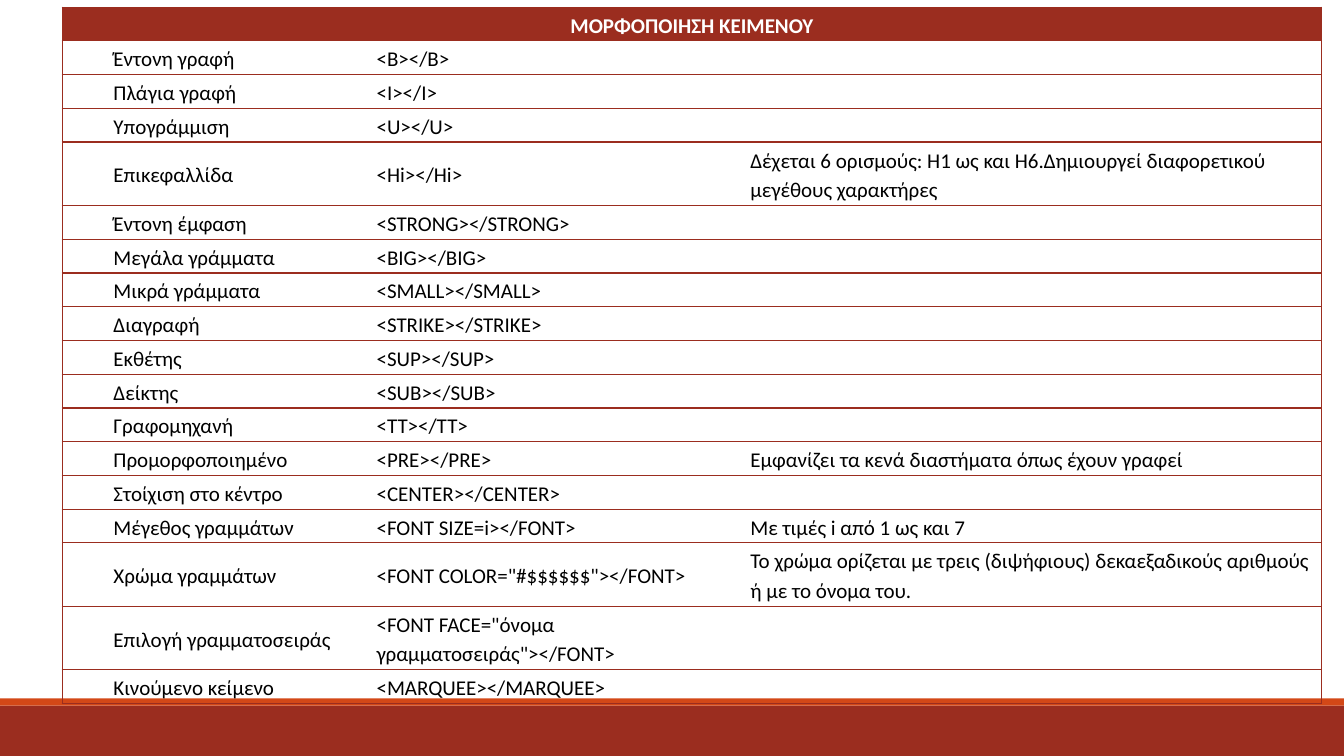
"""Build a slide with a table of HTML text formatting tags."""
from lxml import etree
from pptx import Presentation
from pptx.dml.color import RGBColor
from pptx.enum import shapes, text
from pptx.oxml import ns
from pptx.util import Cm, Pt

HEADING = "ΜΟΡΦΟΠΟΙΗΣΗ ΚΕΙΜΕΝΟΥ"
TAGS = [
    ("Έντονη γραφή", "<B></B>", ""),
    ("Πλάγια γραφή", "<I></I>", ""),
    ("Υπογράμμιση", "<U></U>", ""),
    ("Επικεφαλλίδα", "<Hi></Hi>",
     "Δέχεται 6 ορισμούς: H1 ως και H6.Δημιουργεί διαφορετικού μεγέθους χαρακτήρες"),
    ("Έντονη έμφαση", "<STRONG></STRONG>", ""),
    ("Μεγάλα γράμματα", "<BIG></BIG>", ""),
    ("Μικρά γράμματα", "<SMALL></SMALL>", ""),
    ("Διαγραφή", "<STRIKE></STRIKE>", ""),
    ("Εκθέτης", "<SUP></SUP>", ""),
    ("Δείκτης", "<SUB></SUB>", ""),
    ("Γραφομηχανή", "<TT></TT>", ""),
    ("Προμορφοποιημένο", "<PRE></PRE>", "Εμφανίζει τα κενά διαστήματα όπως έχουν γραφεί"),
    ("Στοίχιση στο κέντρο", "<CENTER></CENTER>", ""),
    ("Μέγεθος γραμμάτων", "<FONT SIZE=i></FONT>", "Με τιμές i από 1 ως και 7"),
    ("Χρώμα γραμμάτων", '<FONT COLOR="#$$$$$$"></FONT>',
     "Το χρώμα ορίζεται με τρεις (διψήφιους) δεκαεξαδικούς αριθμούς ή με το όνομα του."),
    ("Επιλογή γραμματοσειράς", '<FONT FACE="όνομα γραμματοσειράς"></FONT>', ""),
    ("Κινούμενο κείμενο", "<MARQUEE></MARQUEE>", ""),
]
TWO_LINE_ROWS = {4, 15, 16}
COLUMN_WIDTHS = [1.24, 6.63, 9.42, 14.45]
ROW_HEIGHT, TWO_LINE_HEIGHT = 0.85, 1.6
TABLE_LEFT, TABLE_TOP = 1.57, 0.18
PAGE_WIDTH, PAGE_HEIGHT = 33.87, 19.05
BRICK, ORANGE, WHITE, BLACK = "9B2D1F", "D34817", "FFFFFF", "000000"
FOOTER_BARS = [(17.78, 1.27, BRICK), (17.6, 0.18, ORANGE)]


def colour(value):
    return RGBColor.from_string(value)


def add_bar(page, top, height, fill):
    bar = page.shapes.add_shape(shapes.MSO_SHAPE.RECTANGLE, 0, Cm(top), Cm(PAGE_WIDTH), Cm(height))
    bar.shadow.inherit = False
    bar.fill.solid()
    bar.fill.fore_color.rgb = colour(fill)
    bar.line.fill.background()


def set_borders(cell, drawn_sides):
    properties = cell._tc.get_or_add_tcPr()
    for side in "LRTB":
        border = etree.SubElement(properties, ns.qn(f"a:ln{side}"), w=str(Pt(1)))
        if side in drawn_sides:
            fill = etree.SubElement(border, ns.qn("a:solidFill"))
            etree.SubElement(fill, ns.qn("a:srgbClr"), val=BRICK)
        else:
            etree.SubElement(border, ns.qn("a:noFill"))


def format_cell(cell, words, is_heading):
    cell.text = words
    cell.vertical_anchor = text.MSO_ANCHOR.MIDDLE
    margin = Cm(0.05 if words else 0)
    cell.margin_left = cell.margin_right = cell.margin_top = cell.margin_bottom = margin
    if is_heading:
        cell.fill.solid()
        cell.fill.fore_color.rgb = colour(BRICK)
    else:
        cell.fill.background()
    para = cell.text_frame.paragraphs[0]
    if words:
        para.line_spacing = 1.15
        para.space_after = Pt(10)
    para.alignment = text.PP_ALIGN.CENTER if is_heading else text.PP_ALIGN.LEFT
    para.font.name = "Calibri"
    para.font.size = Pt(15)
    para.font.bold = is_heading
    para.font.color.rgb = colour(WHITE if is_heading else BLACK)


def add_tag_table(page):
    rows = [(HEADING, "", "", "")] + [("", *tag) for tag in TAGS]
    heights = [TWO_LINE_HEIGHT if i in TWO_LINE_ROWS else ROW_HEIGHT for i in range(len(rows))]
    table = page.shapes.add_table(
        len(rows), len(COLUMN_WIDTHS), Cm(TABLE_LEFT), Cm(TABLE_TOP),
        Cm(sum(COLUMN_WIDTHS)), Cm(sum(heights))).table
    table.first_row = table.horz_banding = False
    for column, width in zip(table.columns, COLUMN_WIDTHS):
        column.width = Cm(width)
    last = len(COLUMN_WIDTHS) - 1
    for i, (words_in_row, height) in enumerate(zip(rows, heights)):
        table.rows[i].height = Cm(height)
        for j, words in enumerate(words_in_row):
            cell = table.cell(i, j)
            sides = "TB" + ("L" if j == 0 else "") + ("R" if j == last or i == 0 else "")
            set_borders(cell, sides)
            format_cell(cell, words, i == 0)
    table.cell(0, 0).merge(table.cell(0, last))


def main():
    deck = Presentation()
    deck.slide_width, deck.slide_height = Cm(PAGE_WIDTH), Cm(PAGE_HEIGHT)
    page = deck.slides.add_slide(deck.slide_layouts[6])
    for bar in FOOTER_BARS:
        add_bar(page, *bar)
    add_tag_table(page)
    deck.save("out.pptx")


if __name__ == "__main__":
    main()
